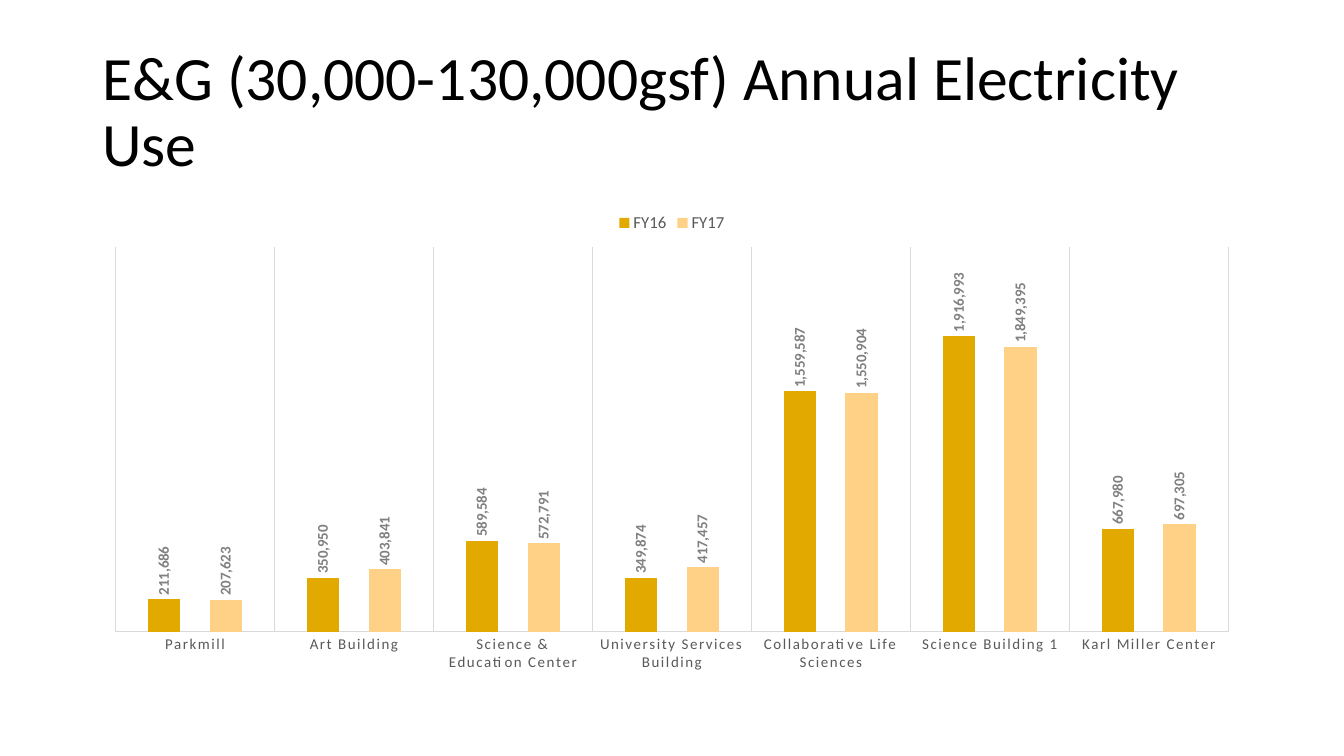
from lxml import etree
from pptx import Presentation, util as u
from pptx.chart.data import CategoryChartData
from pptx.dml.color import RGBColor
from pptx.enum import chart as c, text
from pptx.oxml.ns import qn

FONT = "Calibri"
TITLE = "E&G (30,000-130,000gsf) Annual Electricity Use"
BUILDINGS = [
    "Parkmill", "Art Building", "Science & Education Center",
    "University Services Building", "Collaborative Life Sciences",
    "Science Building 1", "Karl Miller Center",
]
YEARS = [
    ("FY16", "E2AA00", [211686, 350950, 589584, 349874, 1559587, 1916993, 667980]),
    ("FY17", "FFD187", [207623, 403841, 572791, 417457, 1550904, 1849395, 697305]),
]
LEFT, WIDTH = 66, 828
TITLE_TOP, TITLE_HEIGHT = 28.75, 104.4
CHART_TOP, CHART_HEIGHT = 144, 342.6
PLOT_LAYOUT = {"x": 0.02, "y": 0.094, "w": 0.96, "h": 0.803}
AXIS_MAXIMUM = 2500000
LABEL_SIZE = 10.64
NUMBER_FORMAT = "#,##0"


def color(value):
    return RGBColor.from_string(value)


def set_font(font, size, value, bold=False):
    font.name = FONT
    font.size = u.Pt(size)
    font.bold = bold
    font.color.rgb = color(value)
    font._element.set("kern", "1200")


def set_line(line):
    line.color.rgb = color("D9D9D9")
    line.width = u.Pt(0.75)


def add_title(slide):
    box = slide.shapes.add_textbox(
        u.Pt(LEFT), u.Pt(TITLE_TOP), u.Pt(WIDTH), u.Pt(TITLE_HEIGHT))
    frame = box.text_frame
    frame.word_wrap = True
    frame.vertical_anchor = text.MSO_ANCHOR.MIDDLE
    paragraph = frame.paragraphs[0]
    paragraph.text = TITLE
    paragraph.line_spacing = 0.9
    set_font(paragraph.font, 44, "000000")


def place_plot(chart):
    area = chart._chartSpace.find(".//" + qn("c:plotArea"))
    for old in area.findall(qn("c:layout")):
        area.remove(old)
    layout = etree.Element(qn("c:layout"))
    manual = etree.SubElement(layout, qn("c:manualLayout"))
    settings = {"layoutTarget": "inner", "xMode": "edge", "yMode": "edge", **PLOT_LAYOUT}
    for name, value in settings.items():
        etree.SubElement(manual, qn("c:" + name)).set("val", str(value))
    area.insert(0, layout)


def style_axes(chart):
    category_axis = chart.category_axis
    category_axis.major_tick_mark = c.XL_TICK_MARK.NONE
    category_axis.has_major_gridlines = True
    set_line(category_axis.major_gridlines.format.line)
    set_line(category_axis.format.line)
    set_font(category_axis.tick_labels.font, LABEL_SIZE, "595959")
    category_axis._element.find(".//" + qn("a:defRPr")).set("spc", "120")

    value_axis = chart.value_axis
    value_axis.minimum_scale = 0
    value_axis.maximum_scale = AXIS_MAXIMUM
    value_axis.has_major_gridlines = False
    value_axis.tick_labels.number_format = NUMBER_FORMAT
    value_axis.tick_labels.number_format_is_linked = False
    value_axis.visible = False


def style_series(series, fill):
    series.format.fill.solid()
    series.format.fill.fore_color.rgb = color(fill)
    series.invert_if_negative = False
    labels = series.data_labels
    labels.show_value = True
    labels.position = c.XL_LABEL_POSITION.OUTSIDE_END
    labels.number_format = NUMBER_FORMAT
    labels.number_format_is_linked = False
    set_font(labels.font, LABEL_SIZE, "808080", bold=True)
    body = labels._element.find(".//" + qn("a:bodyPr"))
    body.set("rot", "-5400000")
    body.set("vert", "horz")


def add_electricity_chart(slide):
    data = CategoryChartData(number_format=NUMBER_FORMAT)
    data.categories = BUILDINGS
    for name, _, values in YEARS:
        data.add_series(name, values)
    chart = slide.shapes.add_chart(
        c.XL_CHART_TYPE.COLUMN_CLUSTERED, u.Pt(LEFT), u.Pt(CHART_TOP),
        u.Pt(WIDTH), u.Pt(CHART_HEIGHT), data).chart
    set_font(chart.font, 10, "000000")
    chart.has_title = False
    chart.has_legend = True
    chart.legend.position = c.XL_LEGEND_POSITION.TOP
    chart.legend.include_in_layout = False
    set_font(chart.legend.font, 12, "595959")
    plot = chart.plots[0]
    plot.gap_width = 200
    plot.overlap = -90
    plot.vary_by_categories = False
    for series, (_, fill, _) in zip(plot.series, YEARS):
        style_series(series, fill)
    style_axes(chart)
    place_plot(chart)


def main():
    presentation = Presentation()
    presentation.slide_width = u.Pt(960)
    presentation.slide_height = u.Pt(540)
    slide = presentation.slides.add_slide(presentation.slide_layouts[6])
    add_title(slide)
    add_electricity_chart(slide)
    presentation.save("out.pptx")


if __name__ == "__main__":
    main()
